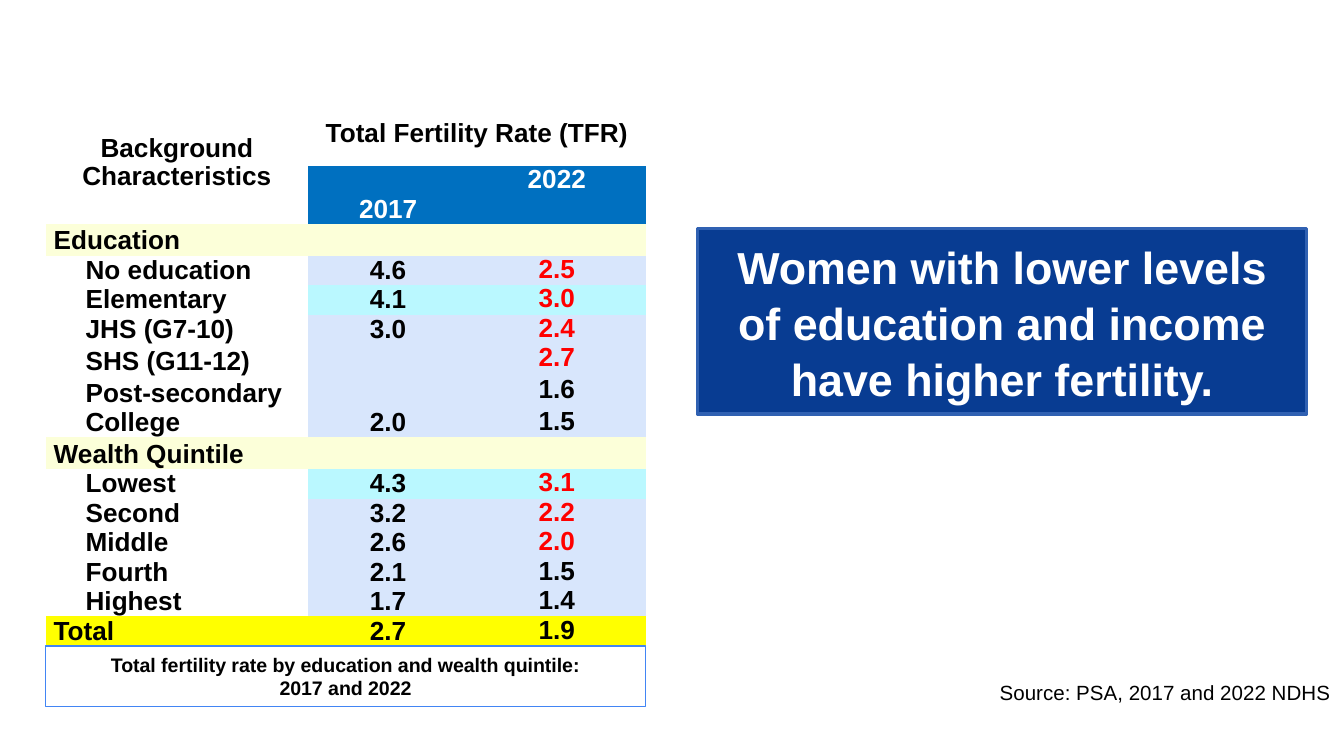
from lxml.etree import SubElement
from pptx import Presentation
from pptx.dml.color import RGBColor
from pptx.enum.shapes import MSO_SHAPE
from pptx.enum.text import MSO_ANCHOR, MSO_AUTO_SIZE, PP_ALIGN
from pptx.oxml.ns import qn
from pptx.util import Pt

BLACK, WHITE, RED = "000000", "FFFFFF", "FF0000"
HEADER_BLUE, SECTION, TOTAL = "0070C0", "FCFFD9", "FFFF00"
PLAIN, HIGHLIGHT = "D8E6FC", "BAF8FF"
NO_STYLE = "{2D5ABB26-0587-4C30-8999-92F81FD0307C}"

GROUPS = {
    "Education": [
        ("No education", "4.6", "2.5", RED, PLAIN),
        ("Elementary", "4.1", "3.0", RED, HIGHLIGHT),
        ("JHS (G7-10)", "3.0", "2.4", RED, PLAIN),
        ("SHS (G11-12)", "", "2.7", RED, PLAIN),
        ("Post-secondary", "", "1.6", BLACK, PLAIN),
        ("College", "2.0", "1.5", BLACK, PLAIN),
    ],
    "Wealth Quintile": [
        ("Lowest", "4.3", "3.1", RED, HIGHLIGHT),
        ("Second", "3.2", "2.2", RED, PLAIN),
        ("Middle", "2.6", "2.0", RED, PLAIN),
        ("Fourth", "2.1", "1.5", BLACK, PLAIN),
        ("Highest", "1.7", "1.4", BLACK, PLAIN),
    ],
}


def rgb(value):
    """Turn a hex string into a colour."""
    return RGBColor.from_string(value)


class FertilitySlide:
    """Holds the style and the current slide."""

    font_name = "Arial"
    table_size = 14

    def __init__(self, presentation):
        """Add a blank slide to the presentation."""
        self.slide = presentation.slides.add_slide(presentation.slide_layouts[6])

    def set_text(self, text_frame, text, size, color, bold=True,
                 alignment=PP_ALIGN.CENTER, spacing=None):
        """Set the text and format every paragraph and run."""
        text_frame.text = text
        for paragraph in text_frame.paragraphs:
            paragraph.alignment = alignment
            if spacing:
                paragraph.line_spacing = spacing
            for run in paragraph.runs:
                run.font.name = self.font_name
                run.font.size = Pt(size)
                run.font.bold = bold
                run.font.color.rgb = rgb(color)

    def box(self, position, text, size, color, line, line_width, fill=None,
            anchor=MSO_ANCHOR.TOP, spacing=None):
        """Add an outlined rectangle with centred bold text."""
        shape = self.slide.shapes.add_shape(MSO_SHAPE.RECTANGLE, *map(Pt, position))
        shape.shadow.inherit = False
        if fill:
            shape.fill.solid()
            shape.fill.fore_color.rgb = rgb(fill)
        else:
            shape.fill.background()
        shape.line.color.rgb = rgb(line)
        shape.line.width = Pt(line_width)
        shape.text_frame.word_wrap = True
        shape.text_frame.vertical_anchor = anchor
        self.set_text(shape.text_frame, text, size, color, spacing=spacing)

    def label(self, position, text, size):
        """Add a right-aligned plain text box."""
        shape = self.slide.shapes.add_textbox(*map(Pt, position))
        shape.text_frame.word_wrap = True
        shape.text_frame.auto_size = MSO_AUTO_SIZE.SHAPE_TO_FIT_TEXT
        self.set_text(shape.text_frame, text, size, BLACK, False, PP_ALIGN.RIGHT)

    def table(self, position, widths, heights):
        """Add an unstyled table with the given column widths and row heights."""
        frame = self.slide.shapes.add_table(len(heights), len(widths), *map(Pt, position))
        table = frame.table
        table.first_row = table.horz_banding = False
        table._tbl.tblPr.find(qn("a:tableStyleId")).text = NO_STYLE
        for column, width in zip(table.columns, widths):
            column.width = Pt(width)
        for row, height in zip(table.rows, heights):
            row.height = Pt(height)
        for cell in table.iter_cells():
            self.cell(cell)
        return table

    def cell(self, cell, text="", color=BLACK, fill=None, anchor=MSO_ANCHOR.BOTTOM,
             alignment=PP_ALIGN.CENTER, indent=0):
        """Fill and format one table cell."""
        cell.margin_left = cell.margin_right = Pt(4.3)
        cell.margin_top = cell.margin_bottom = 0
        cell.vertical_anchor = anchor
        if fill:
            cell.fill.solid()
            cell.fill.fore_color.rgb = rgb(fill)
        else:
            cell.fill.background()
        self.set_text(cell.text_frame, text, self.table_size, color,
                      alignment=alignment, spacing=0.97)
        paragraph = cell.text_frame.paragraphs[0]._p
        if indent:
            paragraph.get_or_add_pPr().set("marL", str(Pt(indent)))
        if paragraph.find(qn("a:endParaRPr")) is None:
            SubElement(paragraph, qn("a:endParaRPr"), sz=str(self.table_size * 100))

    def row(self, table, index, name, first="", second="", color=BLACK, fill=None,
            name_fill=None, alignment=PP_ALIGN.LEFT, indent=0):
        """Fill in a row name and its values for both years."""
        self.cell(table.cell(index, 0), name, fill=name_fill,
                  alignment=alignment, indent=indent)
        self.cell(table.cell(index, 1), first, fill=fill)
        self.cell(table.cell(index, 2), second, color, fill, MSO_ANCHOR.TOP)


def main():
    """Build and save the fertility slide."""
    presentation = Presentation()
    presentation.slide_width, presentation.slide_height = Pt(720), Pt(405)
    page = FertilitySlide(presentation)

    page.box((373.7, 122.4, 326.2, 99.4),
             "Women with lower levels of education and income have higher fertility.",
             24, WHITE, "3061B2", 2, "083C92", MSO_ANCHOR.MIDDLE, 1.05)

    heights = [34, 31] + [15.8] * 14
    table = page.table((24.5, 54.9, 321.4, sum(heights)), (140.6, 85.7, 95.1), heights)
    table.cell(0, 0).merge(table.cell(1, 0))
    table.cell(0, 1).merge(table.cell(0, 2))
    page.cell(table.cell(0, 0), "Background Characteristics", anchor=MSO_ANCHOR.MIDDLE)
    page.cell(table.cell(0, 1), "Total Fertility Rate (TFR)", anchor=MSO_ANCHOR.MIDDLE)
    page.cell(table.cell(1, 1), "2017", WHITE, HEADER_BLUE)
    page.cell(table.cell(1, 2), "2022", WHITE, HEADER_BLUE, MSO_ANCHOR.TOP)

    index = 2
    for group, members in GROUPS.items():
        page.row(table, index, group, fill=SECTION, name_fill=SECTION,
                 alignment=PP_ALIGN.JUSTIFY)
        for index, member in enumerate(members, index + 1):
            page.row(table, index, *member, indent=17.1)
        index += 1
    page.row(table, index, "Total", "2.7", "1.9", fill=TOTAL, name_fill=TOTAL)

    page.box((24.5, 346.1, 321.4, 32.6),
             "Total fertility rate by education and wealth quintile:\n2017 and 2022",
             10.5, BLACK, "4285F4", 0.75)
    page.label((360, 360.7, 360, 20.9), "Source: PSA, 2017 and 2022 NDHS", 11)
    presentation.save("out.pptx")


if __name__ == "__main__":
    main()
